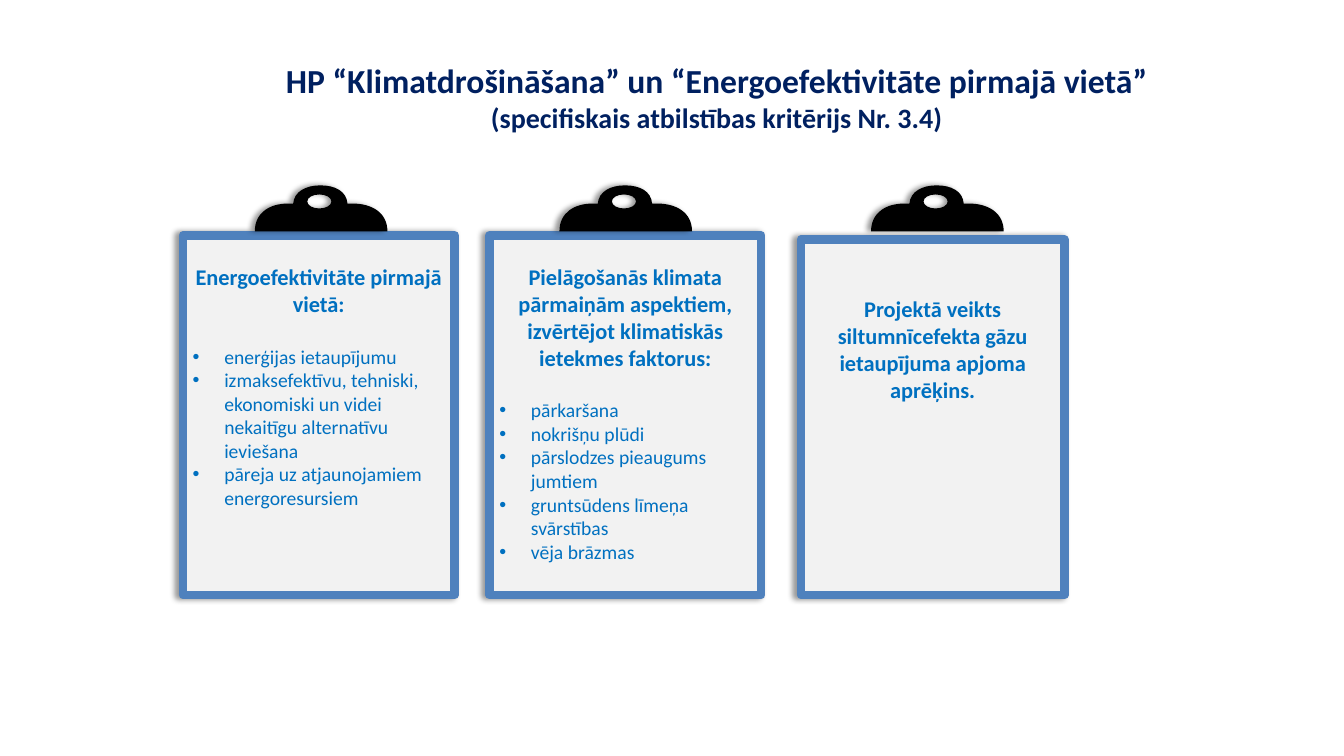
from lxml.etree import SubElement
from pptx import Presentation
from pptx.dml.color import RGBColor
from pptx.enum.shapes import MSO_SHAPE as Preset
from pptx.enum.text import MSO_ANCHOR as Anchor, PP_ALIGN as Align
from pptx.oxml.ns import qn
from pptx.util import Pt

NAVY = RGBColor(0x00, 0x20, 0x60)
BLUE = RGBColor(0x00, 0x70, 0xC0)
FRAME = RGBColor(0x4F, 0x81, 0xBD)
PAPER = RGBColor(0xF2, 0xF2, 0xF2)
BLACK = RGBColor(0x00, 0x00, 0x00)
FONT = "Calibri"

BOARD_BOTTOM = 425
CLIP_TOP = 132.4
TOP_INSET = 20.16
HEADING_LINE = 19.5
BULLET_INDENT = 22.5

CLIP_START = (69.8, 13)
CLIP_OUTLINE = [
    [(66.2, 13)],
    [(65.5, 4.3), (57.6, 0), (46.8, 0)],
    [(36.7, 0), (28.1, 4.3), (27.4, 13)],
    [(23.8, 13)],
    [(10.8, 13), (0, 19.4), (0, 32.8)],
    [(94.7, 32.8)],
    [(94.7, 19.4), (83.5, 13), CLIP_START],
]
HOLE_START = (46.1, 16.5)
HOLE_OUTLINE = [
    [(41.3, 16.5), (37.5, 14.3), (37.5, 11.5)],
    [(37.5, 8.7), (41.3, 6.5), (46.1, 6.5)],
    [(50.9, 6.5), (54.7, 8.7), (54.7, 11.5)],
    [(54.7, 14.3), (50.9, 16.5), HOLE_START],
]

BOARDS = [
    dict(left=130.6, top=168.1, width=194.2, clip_left=182,
         heading="Energoefektivitāte pirmajā vietā:",
         bullets=["enerģijas ietaupījumu",
                  "izmaksefektīvu, tehniski, ekonomiski un videi nekaitīgu "
                  "alternatīvu ieviešana",
                  "pāreja uz atjaunojamiem energoresursiem"]),
    dict(left=349.6, top=168.1, width=194.2, clip_left=399.6,
         heading="Pielāgošanās klimata pārmaiņām aspektiem, izvērtējot "
                 "klimatiskās ietekmes faktorus:",
         bullets=["pārkaršana", "nokrišņu plūdi", "pārslodzes pieaugums jumtiem",
                  "gruntsūdens līmeņa svārstības", "vēja brāzmas"]),
    dict(left=572.1, top=171.1, width=188.4, clip_left=622.2,
         heading="Projektā veikts siltumnīcefekta gāzu ietaupījuma apjoma aprēķins.",
         bullets=[], top_inset=TOP_INSET + HEADING_LINE),
]


def add_run(paragraph, text, size, color, bold):
    run = paragraph.add_run()
    run.text = text
    font = run.font
    font.name, font.size, font.bold = FONT, Pt(size), bold
    font.color.rgb = color


def set_margins(frame, top):
    frame.word_wrap = True
    frame.margin_left = frame.margin_right = Pt(7.2)
    frame.margin_top, frame.margin_bottom = Pt(top), Pt(3.6)


def set_fill(shape, color):
    shape.fill.solid()
    shape.fill.fore_color.rgb = color


def cast_shadow(shape):
    shape.shadow.inherit = False
    effects = shape._element.spPr.find(qn("a:effectLst"))
    shadow = SubElement(effects, qn("a:outerShdw"), blurRad=str(Pt(4)),
                        dist=str(Pt(3)), dir="10800000", algn="r", rotWithShape="0")
    color = SubElement(shadow, qn("a:srgbClr"), val=str(BLACK))
    SubElement(color, qn("a:alpha"), val="40000")


def add_bullet(frame, text, space_before):
    paragraph = frame.add_paragraph()
    properties = paragraph._p.get_or_add_pPr()
    properties.set("marL", str(Pt(BULLET_INDENT)))
    properties.set("indent", str(Pt(-BULLET_INDENT)))
    SubElement(properties, qn("a:buFont"), typeface="Arial")
    SubElement(properties, qn("a:buChar"), char="•")
    paragraph.alignment = Align.LEFT
    paragraph.space_before = Pt(space_before)
    add_run(paragraph, text, 14, BLUE, False)


def add_board(slide, left, top, width, heading, bullets, top_inset=TOP_INSET):
    board = slide.shapes.add_shape(Preset.RECTANGLE, Pt(left), Pt(top),
                                   Pt(width), Pt(BOARD_BOTTOM - top))
    set_fill(board, PAPER)
    board.line.color.rgb = FRAME
    board.line.width = Pt(6)
    cast_shadow(board)
    frame = board.text_frame
    set_margins(frame, top_inset)
    frame.vertical_anchor = Anchor.TOP
    paragraph = frame.paragraphs[0]
    paragraph.alignment = Align.CENTER
    add_run(paragraph, heading, 16, BLUE, True)
    for index, text in enumerate(bullets):
        add_bullet(frame, text, 0 if index else HEADING_LINE)


def to_lengths(point):
    return tuple(Pt(value) for value in point)


def end_points(outline):
    return [to_lengths(segment[-1]) for segment in outline]


def bend_segments(shape, segments):
    lines = list(shape._element.iter(qn("a:lnTo")))
    for line, segment in zip(lines, segments):
        if len(segment) == 3:
            line.tag = qn("a:cubicBezTo")
            end = line[0]
            for control in segment[:2]:
                x, y = to_lengths(control)
                point = SubElement(line, qn("a:pt"), x=str(x), y=str(y))
                end.addprevious(point)


def add_clip(slide, left):
    builder = slide.shapes.build_freeform(*to_lengths(CLIP_START))
    builder.add_line_segments(end_points(CLIP_OUTLINE))
    builder.move_to(*to_lengths(HOLE_START))
    builder.add_line_segments(end_points(HOLE_OUTLINE))
    clip = builder.convert_to_shape(Pt(left), Pt(CLIP_TOP))
    bend_segments(clip, CLIP_OUTLINE + HOLE_OUTLINE)
    set_fill(clip, BLACK)
    clip.line.fill.background()
    cast_shadow(clip)


def format_title(slide):
    title = slide.shapes.title
    title.left, title.top, title.width, title.height = Pt(193), Pt(26.6), Pt(638), Pt(85)
    frame = title.text_frame
    set_margins(frame, 3.6)
    frame.vertical_anchor = Anchor.MIDDLE
    paragraph = frame.paragraphs[0]
    paragraph.alignment = Align.CENTER
    add_run(paragraph, "HP “Klimatdrošināšana” un “Energoefektivitāte pirmajā vietā”",
            24, NAVY, True)
    paragraph.add_line_break()
    add_run(paragraph, "(specifiskais atbilstības kritērijs Nr. 3.4)", 20, NAVY, True)


def main():
    presentation = Presentation()
    presentation.slide_width, presentation.slide_height = Pt(960), Pt(540)
    slide = presentation.slides.add_slide(presentation.slide_layouts[5])
    format_title(slide)
    for board in BOARDS:
        content = dict(board)
        clip_left = content.pop("clip_left")
        add_board(slide, **content)
        add_clip(slide, clip_left)
    presentation.save("out.pptx")


if __name__ == "__main__":
    main()
